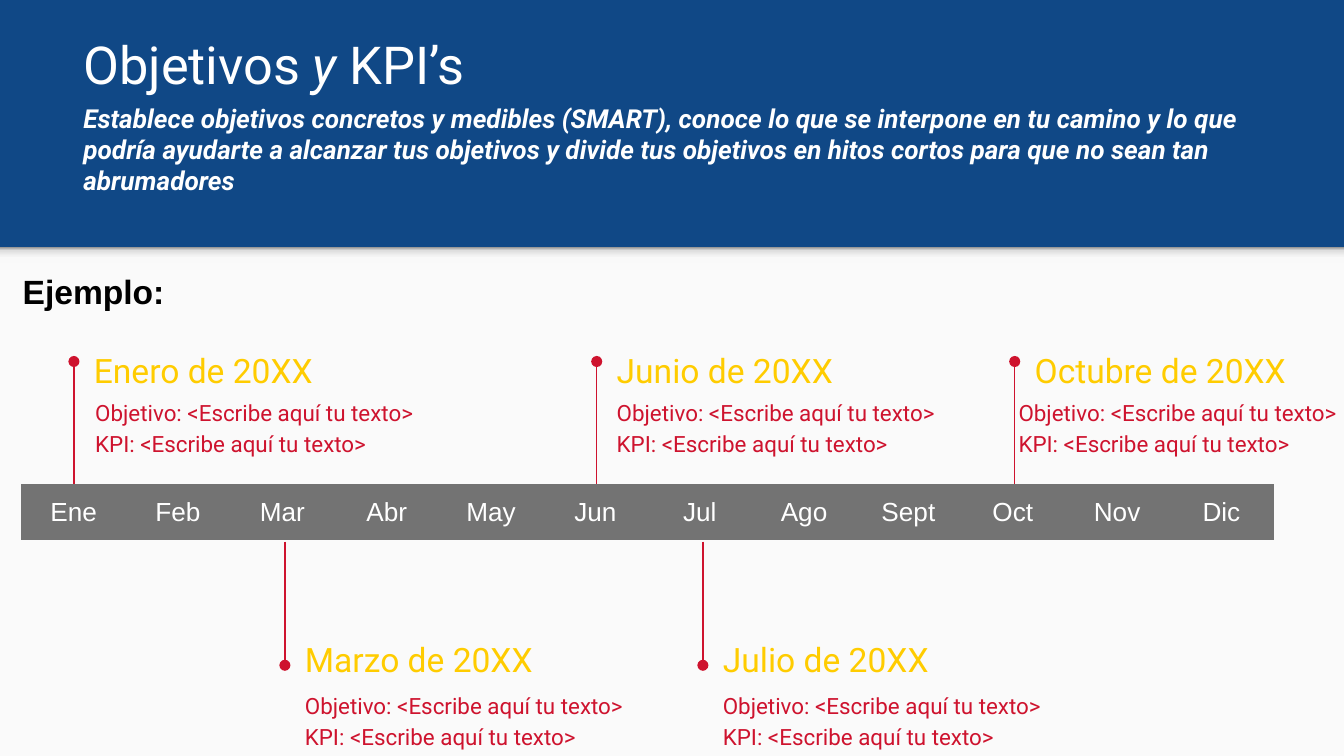
from copy import deepcopy
from typing import NamedTuple

from pptx import Presentation
from pptx.dml.color import RGBColor
from pptx.enum.shapes import MSO_CONNECTOR as Link, MSO_SHAPE as Form
from pptx.enum.text import MSO_ANCHOR as Anchor, MSO_AUTO_SIZE as Fit, PP_ALIGN as Align
from pptx.oxml.ns import qn
from pptx.util import Inches, Pt

BLUE = RGBColor(0x10, 0x48, 0x86)
PAPER = RGBColor(0xFA, 0xFA, 0xFA)
PALE = RGBColor(0xF9, 0xF9, 0xF9)
MIST = RGBColor(0xDE, 0xDE, 0xDE)
SHADE = RGBColor(0x99, 0x99, 0x99)
GRAY = RGBColor(0x73, 0x73, 0x73)
RED = RGBColor(0xCE, 0x13, 0x2E)
GOLD = RGBColor(0xFF, 0xCC, 0x00)
WHITE = RGBColor(0xFF, 0xFF, 0xFF)
BLACK = RGBColor(0x00, 0x00, 0x00)

WIDE = Inches(10)
HIGH = WIDE * 9 // 16
EDGE = Inches(1.84)
PLAIN_TABLE = "{2D5ABB26-0587-4C30-8999-92F81FD0307C}"
MONTHS = "Ene Feb Mar Abr May Jun Jul Ago Sept Oct Nov Dic".split()
GOAL = "Objetivo: <Escribe aquí tu texto> KPI: <Escribe aquí tu texto>"
ADVICE = (
    "Establece objetivos concretos y medibles (SMART), conoce lo que se interpone "
    "en tu camino y lo que podría ayudarte a alcanzar tus objetivos y divide tus "
    "objetivos en hitos cortos para que no sean tan abrumadores"
)


class Row(NamedTuple):
    """Heights shared by the milestones on one side of the month bar."""
    bar: float
    dot: float
    head: float
    goal: float


class Stone(NamedTuple):
    title: str
    x: float
    row: Row
    head_w: float
    goal_x: float
    goal_w: float


ABOVE = Row(3.6, 2.69, 2.54, 2.84)
BELOW = Row(4.03, 4.95, 4.69, 5.02)
STONES = [
    Stone("Enero de 20XX", 0.55, ABOVE, 1.98, 0.61, 2.81),
    Stone("Marzo de 20XX", 2.12, BELOW, 2.32, 2.17, 2.68),
    Stone("Junio de 20XX", 4.44, ABOVE, 1.98, 4.49, 2.59),
    Stone("Julio de 20XX", 5.23, BELOW, 1.98, 5.28, 2.68),
    Stone("Octubre de 20XX", 7.55, ABOVE, 2.21, 7.48, 2.59),
]


def write(par, text: str, *, size: float, color: RGBColor, font: str = "Roboto",
          bold: bool = False, italic: bool = False, align=Align.LEFT) -> None:
    """Append one formatted run to a paragraph."""
    par.alignment = align
    run = par.add_run()
    run.text = text
    face = run.font
    face.name, face.size, face.color.rgb = font, Pt(size), color
    face.bold, face.italic = bold, italic


def set_frame(frame, anchor=Anchor.TOP, pad_y: float = 0.1) -> None:
    frame.word_wrap = True
    frame.auto_size = Fit.NONE
    frame.vertical_anchor = anchor
    frame.margin_left = frame.margin_right = Inches(0.1)
    frame.margin_top = frame.margin_bottom = Inches(pad_y)


def add_text(slide, x: float, y: float, w: float, h: float, text: str, *,
             anchor=Anchor.TOP, pad_y: float = 0.1, **style):
    """Add a one-paragraph text box and return its paragraph."""
    box = slide.shapes.add_textbox(Inches(x), Inches(y), Inches(w), Inches(h))
    set_frame(box.text_frame, anchor, pad_y)
    par = box.text_frame.paragraphs[0]
    write(par, text, **style)
    return par


def add_band(slide, height: int):
    """Add a full-width rectangle below the header and return its fill."""
    rect = slide.shapes.add_shape(Form.RECTANGLE, 0, EDGE, WIDE, height)
    rect.shadow.inherit = False
    rect.line.fill.background()
    return rect.fill


def add_panel(slide) -> None:
    """Draw the light lower panel and the soft shade along its top edge."""
    panel = add_band(slide, HIGH - EDGE)
    panel.solid()
    panel.fore_color.rgb = PAPER
    fill = add_band(slide, Inches(0.12))
    fill.gradient()
    fill.gradient_angle = 90
    stops = fill._fill._gradFill.gsLst
    for gs in list(stops):
        stops.append(deepcopy(gs))
    marks = [(0, PALE), (0.36, PALE), (0.8, MIST), (1, SHADE)]
    for stop, (place, color) in zip(fill.gradient_stops, marks):
        stop.position = place
        stop.color.rgb = color


def add_title(slide) -> None:
    title = slide.shapes.title
    title.left, title.top = Inches(0.52), Inches(0.72)
    title.width, title.height = Inches(8.99), Inches(0.84)
    frame = title.text_frame
    set_frame(frame, Anchor.BOTTOM)
    top = frame.paragraphs[0]
    for text, slant in [("Objetivos", False), (" y ", True), ("KPI’s", False)]:
        write(top, text, size=28, color=WHITE, italic=slant)
    sub = frame.add_paragraph()
    sub.space_before = sub.space_after = Pt(4)
    write(sub, ADVICE, size=14, color=WHITE, bold=True, italic=True)


def add_stone(slide, stone: Stone) -> None:
    """Draw a milestone: pin from the bar, heading and goal."""
    row, x = stone.row, Inches(stone.x)
    pin = slide.shapes.add_connector(Link.STRAIGHT, x, Inches(row.bar), x, Inches(row.dot))
    pin.line.color.rgb = RED
    pin.line.width = Pt(0.75)
    props = pin._element.spPr
    line = props.find(qn("a:ln"))
    line.append(line.makeelement(qn("a:tailEnd"), {"type": "oval"}))
    props.append(props.makeelement(qn("a:effectLst"), {}))
    add_text(slide, stone.x + 0.05, row.head, stone.head_w, 0.43, stone.title,
             anchor=Anchor.MIDDLE, size=18, color=GOLD)
    goal = add_text(slide, stone.goal_x, row.goal, stone.goal_w, 0.63, GOAL,
                    size=12, color=RED)
    goal.line_spacing = 1.15
    goal.space_after = Pt(16)


def add_months(slide) -> None:
    table = slide.shapes.add_table(1, len(MONTHS), Inches(0.16), Inches(3.6),
                                   Inches(9.32), Inches(0.42)).table
    table.first_row = table.horz_banding = False
    table._tbl.tblPr.find(qn("a:tableStyleId")).text = PLAIN_TABLE
    for cell, month in zip(table.iter_cells(), MONTHS):
        cell.fill.solid()
        cell.fill.fore_color.rgb = GRAY
        cell.margin_left = cell.margin_right = Inches(0.1)
        cell.margin_top = cell.margin_bottom = Inches(0.1)
        write(cell.text_frame.paragraphs[0], month, size=14, color=WHITE,
              font="Arial", align=Align.CENTER)


def main() -> None:
    deck = Presentation()
    deck.slide_width, deck.slide_height = WIDE, HIGH
    slide = deck.slides.add_slide(deck.slide_layouts[5])
    slide.background.fill.solid()
    slide.background.fill.fore_color.rgb = BLUE
    add_panel(slide)
    add_title(slide)
    for stone in STONES:
        add_stone(slide, stone)
    add_months(slide)
    add_text(slide, 0.07, 1.97, 5.05, 0.4, "Ejemplo:", pad_y=0.05,
             size=18, color=BLACK, font="Arial", bold=True)
    deck.save("out.pptx")


if __name__ == "__main__":
    main()
